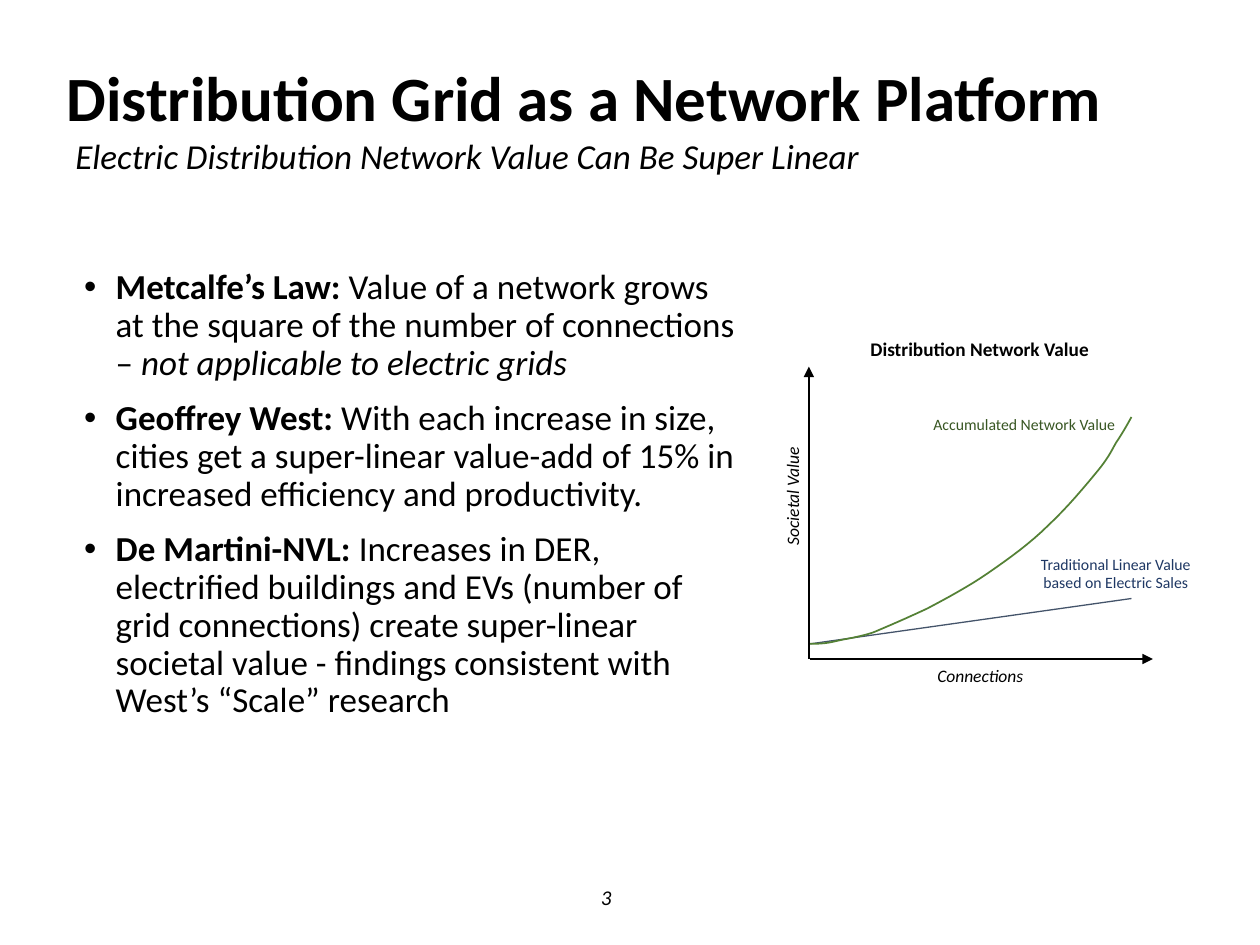
"""Build the slide on the distribution grid as a network platform."""
from lxml import etree
from pptx import Presentation
from pptx.dml.color import RGBColor
from pptx.enum.shapes import MSO_CONNECTOR
from pptx.enum.text import MSO_ANCHOR, PP_ALIGN
from pptx.oxml.ns import qn
from pptx.util import Pt

PX = 9144
STRAIGHT = MSO_CONNECTOR.STRAIGHT
MIDDLE = MSO_ANCHOR.MIDDLE
LEFT, CENTER = PP_ALIGN.LEFT, PP_ALIGN.CENTER
BLACK, GREEN, SLATE = "000000", "548135", "44546A"
DARK_GREEN, NAVY = "385623", "1F3864"


def color(hex_text):
    return RGBColor.from_string(hex_text)


def style(font, size, hex_text, bold=False, italic=False):
    font.name = "Calibri"
    font.size = Pt(size)
    font.color.rgb = color(hex_text)
    font.bold = bold
    font.italic = italic


deck = Presentation()
deck.slide_width, deck.slide_height = 1000 * PX, 750 * PX
page = deck.slides.add_slide(deck.slide_layouts[6])

labels = [
    ("3", 467, 697, 40, 30, 12, BLACK, False, True, LEFT, 0),
    ("Distribution Grid as a Network Platform", 43, 40, 889, 81, 36, BLACK, True, False, LEFT, 0),
    ("Electric Distribution Network Value Can Be Super Linear",
     50, 102, 647, 44, 20, BLACK, False, True, LEFT, 0),
    ("Distribution Network Value", 681, 263, 196, 29, 11, BLACK, True, False, LEFT, 0),
    ("Connections", 734, 523, 91, 27, 10, BLACK, False, True, LEFT, 0),
    ("Societal Value", 579, 379, 100, 27, 10, BLACK, False, True, LEFT, 270),
    ("Accumulated Network Value", 731, 324, 167, 25, 9, DARK_GREEN, False, False, LEFT, 0),
    ("Traditional Linear Value based on Electric Sales",
     814, 435, 143, 40, 9, NAVY, False, False, CENTER, 0),
]
for text, left, top, width, height, size, hex_text, bold, italic, align, turn in labels:
    box = page.shapes.add_textbox(left * PX, top * PX, width * PX, height * PX)
    box.rotation = turn
    box.text_frame.word_wrap = True
    box.text_frame.text = text
    para = box.text_frame.paragraphs[0]
    para.alignment = align
    style(para.runs[0].font, size, hex_text, bold, italic)
    if size == 36:
        box.text_frame.vertical_anchor = MIDDLE
        para.line_spacing = 0.9

points = [
    ("Metcalfe’s Law: ",
     "Value of a network grows at the square of the number of connections – ",
     "not applicable to electric grids"),
    ("Geoffrey West: ",
     "With each increase in size, cities get a super-linear value-add of 15% "
     "in increased efficiency and productivity."),
    ("De Martini-NVL: ",
     "Increases in DER, electrified buildings and EVs (number of grid connections) "
     "create super-linear societal value - findings consistent with West’s “Scale” research"),
]
body = page.shapes.add_textbox(57 * PX, 209 * PX, 542 * PX, 411 * PX)
body.text_frame.word_wrap = True
for index, parts in enumerate(points):
    para = body.text_frame.add_paragraph() if index else body.text_frame.paragraphs[0]
    para.line_spacing = 0.9
    para.space_before = Pt(10 if index else 0)
    properties = para._p.get_or_add_pPr()
    properties.set("marL", str(25 * PX))
    properties.set("indent", str(-25 * PX))
    etree.SubElement(properties, qn("a:buFont")).set("typeface", "Arial")
    etree.SubElement(properties, qn("a:buChar")).set("char", "•")
    for place, part in enumerate(parts):
        span = para.add_run()
        span.text = part
        style(span.font, 20, BLACK, bold=place == 0, italic=place == 2)

lines = [
    (643, 523, 915, 523, BLACK, True),
    (642, 523, 642, 291, BLACK, True),
    (643, 511, 898, 475, SLATE, False),
]
for x1, y1, x2, y2, hex_text, arrow in lines:
    line = page.shapes.add_connector(STRAIGHT, x1 * PX, y1 * PX, x2 * PX, y2 * PX)
    line.line.color.rgb = color(hex_text)
    line.line.width = Pt(0.75)
    if arrow:
        etree.SubElement(line.line._get_or_add_ln(), qn("a:tailEnd")).set("type", "triangle")
    etree.SubElement(line._element.spPr, qn("a:effectLst"))

start = (643, 511)
bends = [
    ((649, 511), (655, 511), (663, 509)),
    ((671, 507), (681, 506), (693, 502)),
    ((705, 497), (721, 490), (736, 483)),
    ((751, 475), (768, 466), (784, 455)),
    ((800, 444), (818, 431), (832, 417)),
    ((847, 403), (862, 385), (871, 374)),
    ((880, 363), (882, 358), (886, 351)),
    ((891, 344), (898, 331), (898, 331)),
]
STEPS = 8
samples = []
origin = start
for first, second, end in bends:
    for step in range(1, STEPS + 1):
        t = step / STEPS
        weights = ((1 - t) ** 3, 3 * t * (1 - t) ** 2, 3 * t ** 2 * (1 - t), t ** 3)
        knots = (origin, first, second, end)
        samples.append([sum(w * knot[axis] for w, knot in zip(weights, knots)) * PX
                        for axis in (0, 1)])
    origin = end
builder = page.shapes.build_freeform(start[0] * PX, start[1] * PX)
builder.add_line_segments(samples, close=False)
curve = builder.convert_to_shape()
curve.shadow.inherit = False
curve.fill.background()
curve.line.color.rgb = color(GREEN)
curve.line.width = Pt(1)

deck.save("out.pptx")
